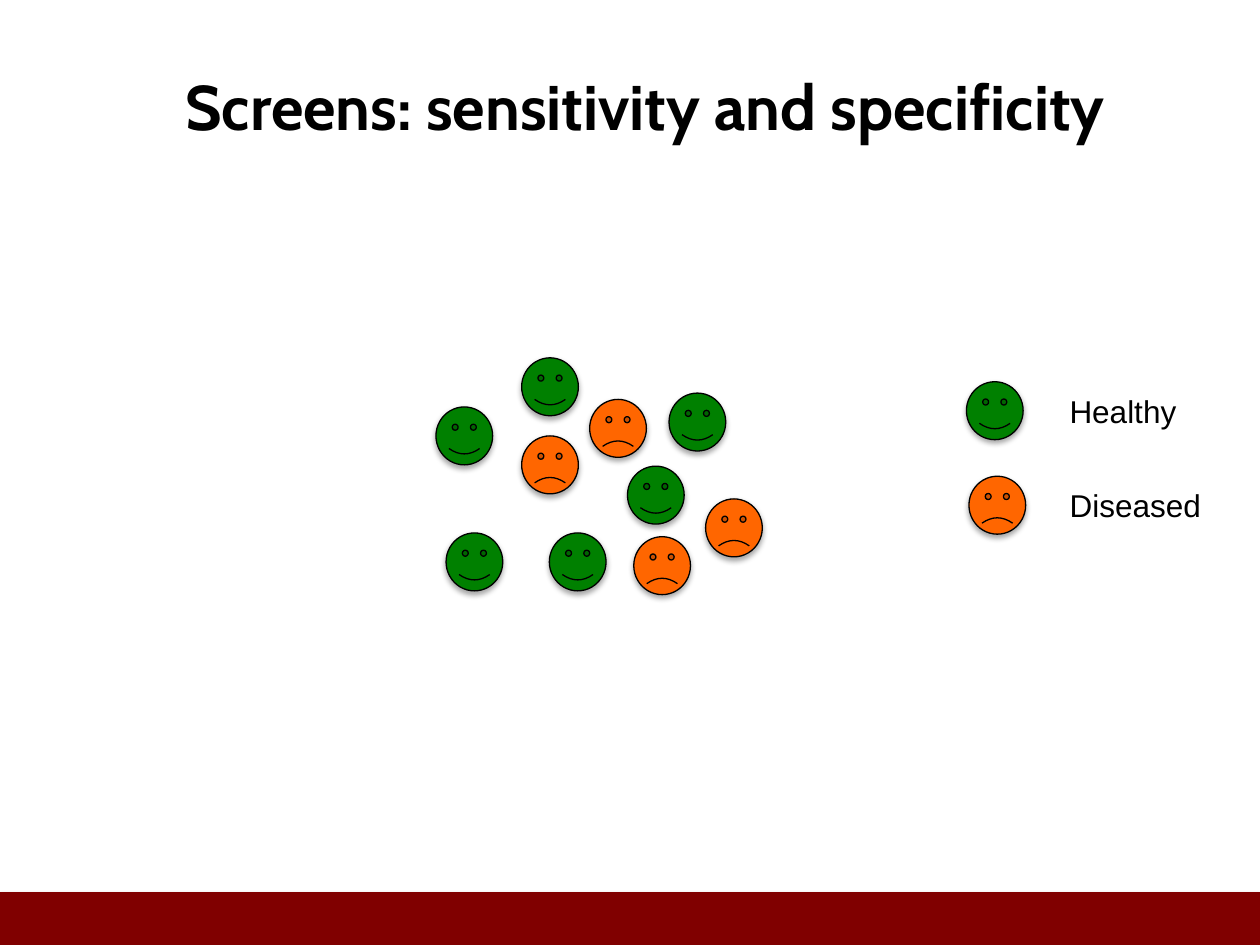
from lxml import etree
from pptx import Presentation
from pptx.dml.color import RGBColor
from pptx.enum.shapes import MSO_SHAPE as SHAPE
from pptx.enum.text import MSO_ANCHOR as ANCHOR, MSO_AUTO_SIZE as AUTO_SIZE, PP_ALIGN as ALIGN
from pptx.oxml import parse_xml
from pptx.oxml.ns import nsdecls, qn
from pptx.util import Inches, Pt

BLACK = RGBColor(0x00, 0x00, 0x00)
MAROON = RGBColor(0x80, 0x00, 0x00)
GREEN = RGBColor(0x00, 0x80, 0x00)
ORANGE = RGBColor(0xFF, 0x66, 0x00)

FACE_W, FACE_H = 0.45, 0.46
SMILE = 0.047

# Face offsets from the top left of the crowd: x, y, healthy
CROWD = [
    (0.68, 0.62, False), (1.85, 0.28, True), (0.08, 1.39, True),
    (0.90, 1.39, True), (0.00, 0.39, True), (0.68, 0.00, True),
    (1.52, 0.86, True), (1.22, 0.33, False), (2.14, 1.12, False),
    (1.57, 1.42, False),
]
# Legend rows: label, label width, face x, healthy
LEGEND = [("Healthy", 1.06, 0.00, True), ("Diseased", 1.25, 0.02, False)]
LEGEND_STEP = 0.75


def add_shadow(sp):
    """Give a shape a soft shadow that falls straight down."""
    sp.shadow.inherit = False
    effects = sp._element.spPr.find(qn("a:effectLst"))
    effects.append(parse_xml(
        f'<a:outerShdw {nsdecls("a")} blurRad="{Pt(3.15)}" dist="{Pt(1.8)}" '
        'dir="5400000" rotWithShape="0"><a:srgbClr val="000000">'
        '<a:alpha val="35000"/></a:srgbClr></a:outerShdw>'))


def add_shape(shapes, kind, x, y, w, h, fill):
    sp = shapes.add_shape(kind, Inches(x), Inches(y), Inches(w), Inches(h))
    sp.fill.solid()
    sp.fill.fore_color.rgb = fill
    sp.line.fill.background()
    add_shadow(sp)
    return sp


def add_face(shapes, x, y, healthy):
    sp = add_shape(shapes, SHAPE.SMILEY_FACE, x, y, FACE_W, FACE_H,
                   GREEN if healthy else ORANGE)
    sp.adjustments[0] = SMILE if healthy else -SMILE
    sp.line.color.rgb = BLACK
    sp.line.width = Pt(0.75)


def add_text(shapes, x, y, w, h, text, font, size, bold=False):
    tb = shapes.add_textbox(Inches(x), Inches(y), Inches(w), Inches(h))
    p = tb.text_frame.paragraphs[0]
    p.text = text
    p.font.name = font
    p.font.size = Pt(size)
    p.font.bold = bold
    p.font.color.rgb = BLACK
    return tb.text_frame


def add_footer_band(slide, x, y, w, h):
    add_shape(slide.shapes, SHAPE.RECTANGLE, x, y, w, h, MAROON)


def add_title(slide, x, y, w, h):
    tf = add_text(slide.shapes, x, y, w, h,
                  "Screens: sensitivity and specificity", "Cabin", 36, bold=True)
    tf.word_wrap = True
    tf.vertical_anchor = ANCHOR.MIDDLE
    tf.paragraphs[0].alignment = ALIGN.CENTER


def add_crowd(slide, x, y):
    group = slide.shapes.add_group_shape()
    for dx, dy, healthy in CROWD:
        add_face(group.shapes, x + dx, y + dy, healthy)


def add_legend(slide, x, y):
    group = slide.shapes.add_group_shape()
    for row, (label, width, dx, healthy) in enumerate(LEGEND):
        top = y + row * LEGEND_STEP
        add_face(group.shapes, x + dx, top, healthy)
        tf = add_text(group.shapes, x + 0.72, top + 0.03, width, 0.4,
                      label, "Arial", 18)
        tf.word_wrap = False
        tf.auto_size = AUTO_SIZE.SHAPE_TO_FIT_TEXT


def main():
    prs = Presentation()
    prs.slide_width, prs.slide_height = Inches(10), Inches(7.5)
    slide = prs.slides.add_slide(prs.slide_layouts[6])
    add_footer_band(slide, 0, 7.08, 10, 0.42)
    add_title(slide, 0.62, 0.21, 9, 1.25)
    add_crowd(slide, 3.46, 2.84)
    add_legend(slide, 7.67, 3.03)
    prs.save("out.pptx")


if __name__ == "__main__":
    main()
